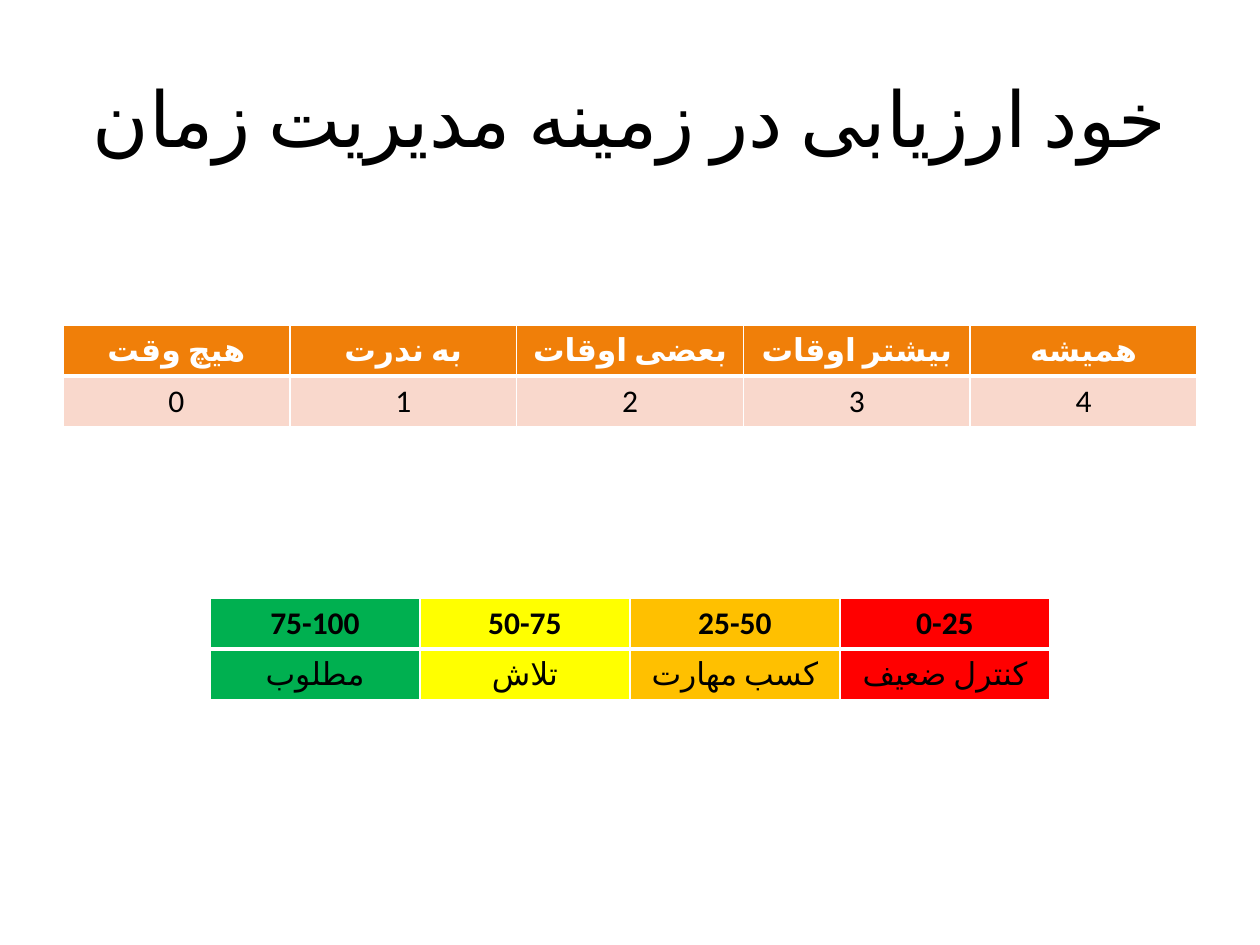
"""Build a slide with a time-management self-assessment scale and its score bands."""

import dataclasses

import lxml.etree
import pptx
import pptx.dml.color
import pptx.enum.text
import pptx.oxml.ns
import pptx.presentation
import pptx.slide
import pptx.table
import pptx.text.text
import pptx.util

EMU_PER_PX = 914400 / 126


@dataclasses.dataclass(frozen=True)
class Theme:
    font: str = "Calibri"
    language: str = "fa-IR"
    title_size: int = 44
    table_size: int = 18
    rule_width: int = 3
    black: str = "000000"
    white: str = "FFFFFF"
    orange: str = "F07F09"
    peach: str = "F9D8CC"
    green: str = "00B050"
    yellow: str = "FFFF00"
    amber: str = "FFC000"
    red: str = "FF0000"


THEME = Theme()


@dataclasses.dataclass(frozen=True)
class Column:
    heading: str
    value: str
    heading_fill: str = THEME.orange
    value_fill: str = THEME.peach


@dataclasses.dataclass(frozen=True)
class ScaleTable:
    left: int
    top: int
    width: int
    row_height: int
    heading_color: str
    columns: tuple[Column, ...]


ANSWERS = ("هیچ وقت", "به ندرت", "بعضی اوقات", "بیشتر اوقات", "همیشه")
BANDS = (
    ("75-100", "مطلوب", THEME.green),
    ("50-75", "تلاش", THEME.yellow),
    ("25-50", "کسب مهارت", THEME.amber),
    ("0-25", "کنترل ضعیف", THEME.red),
)
TABLES = (
    ScaleTable(63, 325, 1134, 51, THEME.white,
               tuple(Column(answer, str(score)) for score, answer in enumerate(ANSWERS))),
    ScaleTable(210, 598, 840, 51, THEME.black,
               tuple(Column(scores, label, fill, fill) for scores, label, fill in BANDS)),
)


def px(length: int) -> pptx.util.Emu:
    return pptx.util.Emu(round(length * EMU_PER_PX))


def write_text(frame: pptx.text.text.TextFrame, text: str, size: int,
               color: str, bold: bool = False) -> None:
    paragraph = frame.paragraphs[0]
    paragraph.alignment = pptx.enum.text.PP_ALIGN.CENTER
    paragraph._p.get_or_add_pPr().set("rtl", "1")
    run = paragraph.add_run()
    run.text = text
    run.font.name = THEME.font
    run.font.size = pptx.util.Pt(size)
    run.font.bold = bold
    run.font.color.rgb = pptx.dml.color.RGBColor.from_string(color)
    properties = run._r.get_or_add_rPr()
    properties.set("lang", THEME.language)
    complex_font = lxml.etree.SubElement(properties, pptx.oxml.ns.qn("a:cs"))
    complex_font.set("typeface", THEME.font)


def add_title(slide: pptx.slide.Slide, text: str) -> None:
    shape = slide.shapes.add_textbox(px(63), px(38), px(1134), px(157))
    shape.text_frame.word_wrap = True
    shape.text_frame.vertical_anchor = pptx.enum.text.MSO_ANCHOR.MIDDLE
    write_text(shape.text_frame, text, THEME.title_size, THEME.black)


def add_rule(cell: pptx.table._Cell, edge: str) -> None:
    qualified = pptx.oxml.ns.qn
    line = lxml.etree.Element(qualified(edge), w=str(pptx.util.Pt(THEME.rule_width)))
    fill = lxml.etree.SubElement(line, qualified("a:solidFill"))
    lxml.etree.SubElement(fill, qualified("a:srgbClr"), val=THEME.white)
    cell._tc.get_or_add_tcPr().insert(0, line)


def add_scale_table(slide: pptx.slide.Slide, scale: ScaleTable) -> None:
    table = slide.shapes.add_table(
        2, len(scale.columns), px(scale.left), px(scale.top),
        px(scale.width), px(2 * scale.row_height)).table
    for index, column in enumerate(scale.columns):
        rows = (
            (column.heading, column.heading_fill, scale.heading_color, True, "a:lnB"),
            (column.value, column.value_fill, THEME.black, False, "a:lnT"),
        )
        for row, (text, fill, color, bold, edge) in enumerate(rows):
            cell = table.cell(row, index)
            cell.fill.solid()
            cell.fill.fore_color.rgb = pptx.dml.color.RGBColor.from_string(fill)
            add_rule(cell, edge)
            write_text(cell.text_frame, text, THEME.table_size, color, bold)


def main() -> None:
    presentation = pptx.Presentation()
    presentation.slide_width = px(1260)
    presentation.slide_height = px(945)
    slide = presentation.slides.add_slide(presentation.slide_layouts[6])
    add_title(slide, "خود ارزیابی در زمینه مدیریت زمان")
    for scale in TABLES:
        add_scale_table(slide, scale)
    presentation.save("out.pptx")


if __name__ == "__main__":
    main()
